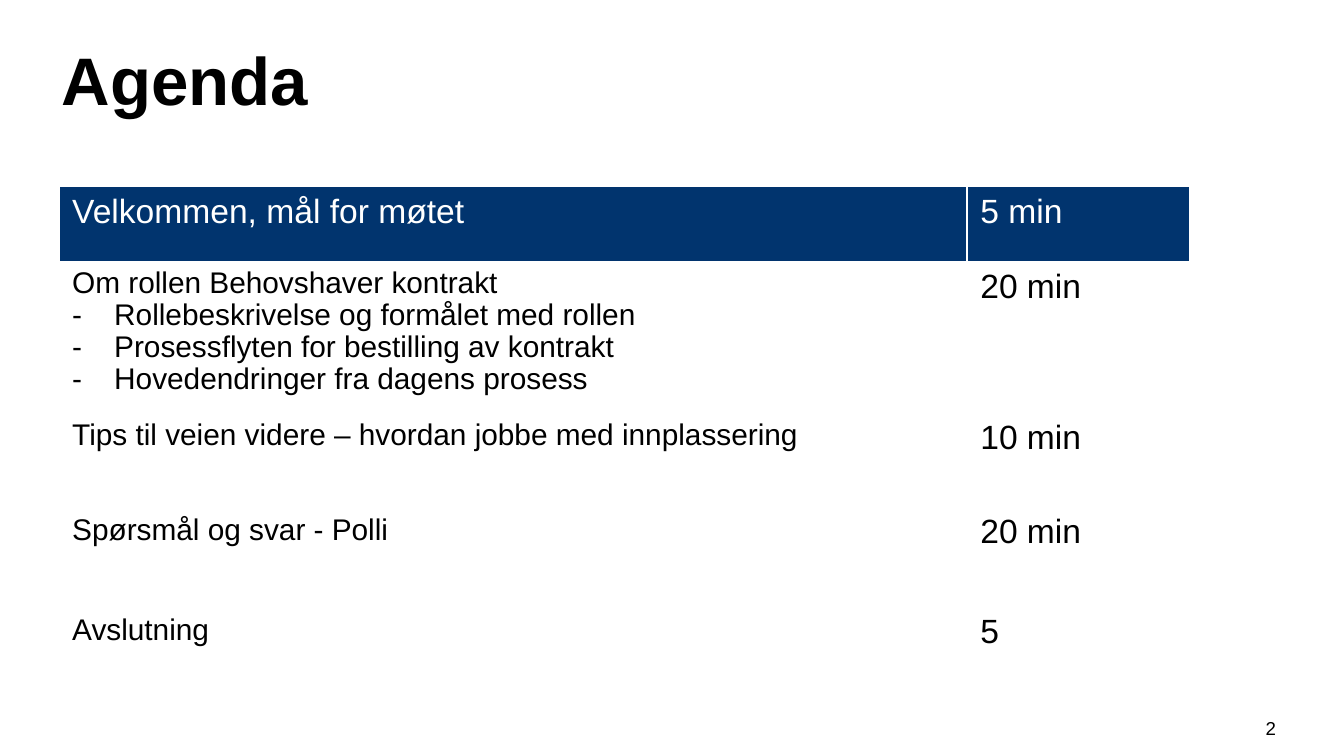
from dataclasses import dataclass

from lxml.etree import SubElement
from pptx import Presentation
from pptx.dml.color import RGBColor
from pptx.enum.text import MSO_ANCHOR, PP_ALIGN
from pptx.oxml.ns import qn
from pptx.util import Pt


@dataclass(frozen=True)
class Theme:
    """Colours, typeface and type sizes of the deck."""
    font: str = "Arial"
    ink: RGBColor = RGBColor(0, 0, 0)
    light: RGBColor = RGBColor(255, 255, 255)
    navy: RGBColor = RGBColor(0x01, 0x34, 0x6E)
    title: int = 36
    large: int = 18
    body: int = 16
    small: int = 10


THEME = Theme()
INDENT = Pt(22.5)
COLUMNS = (486.5, 119.5)
ROWS = (40, 78, 50.5, 53.5, 50.5)
AGENDA = (
    (["Velkommen, mål for møtet"], "5 min"),
    (["Om rollen Behovshaver kontrakt",
      "Rollebeskrivelse og formålet med rollen",
      "Prosessflyten for bestilling av kontrakt",
      "Hovedendringer fra dagens prosess"], "20 min"),
    (["Tips til veien videre – hvordan jobbe med innplassering"], "10 min"),
    (["Spørsmål og svar - Polli"], "20 min"),
    (["Avslutning"], "5"),
)


def style(para, size, color, bold=False):
    """Set the font of a paragraph."""
    font = para.font
    font.name, font.size, font.bold = THEME.font, Pt(size), bold
    font.color.rgb = color


def add_dash(para):
    """Give a paragraph a hanging dash bullet."""
    props = para._p.get_or_add_pPr()
    props.set("marL", str(INDENT))
    props.set("indent", str(-INDENT))
    SubElement(props, qn("a:buFont"), typeface=THEME.font)
    SubElement(props, qn("a:buChar"), char="-")


def add_label(page, box, text, size, align=PP_ALIGN.LEFT, bold=False):
    """Place one line of text, centred vertically in its box."""
    frame = page.shapes.add_textbox(*map(Pt, box)).text_frame
    frame.word_wrap = True
    frame.vertical_anchor = MSO_ANCHOR.MIDDLE
    para = frame.paragraphs[0]
    para.text, para.alignment = text, align
    style(para, size, THEME.ink, bold)


def fill_cell(cell, lines, size, header):
    """Write a cell, with every line after the first as a dash item."""
    if header:
        cell.fill.solid()
        cell.fill.fore_color.rgb = THEME.navy
    else:
        cell.fill.background()
    frame = cell.text_frame
    for index, line in enumerate(lines):
        para = frame.add_paragraph() if index else frame.paragraphs[0]
        para.text = line
        if len(lines) > 1:
            para.line_spacing = 0.96
        if index:
            add_dash(para)
        style(para, size, THEME.light if header else THEME.ink)


def add_agenda(page, left, top):
    """Place the agenda table with its topics and durations."""
    table = page.shapes.add_table(
        len(ROWS), len(COLUMNS), Pt(left), Pt(top), Pt(sum(COLUMNS)), Pt(sum(ROWS))).table
    table.first_row = table.horz_banding = False
    for column, width in zip(table.columns, COLUMNS):
        column.width = Pt(width)
    for index, (row, height, (topic, duration)) in enumerate(zip(table.rows, ROWS, AGENDA)):
        row.height = Pt(height)
        header = index == 0
        fill_cell(row.cells[0], topic, THEME.large if header else THEME.body, header)
        fill_cell(row.cells[1], [duration], THEME.large, header)


def main():
    """Build the agenda slide and save the deck."""
    deck = Presentation()
    deck.slide_width, deck.slide_height = Pt(720), Pt(405)
    page = deck.slides.add_slide(deck.slide_layouts[6])
    add_label(page, (667.5, 379.5, 26.5, 21.5), "2", THEME.small, PP_ALIGN.CENTER)
    add_label(page, (26, 16.5, 660, 51), "Agenda", THEME.title, bold=True)
    add_agenda(page, 31.5, 100)
    deck.save("out.pptx")


if __name__ == "__main__":
    main()
